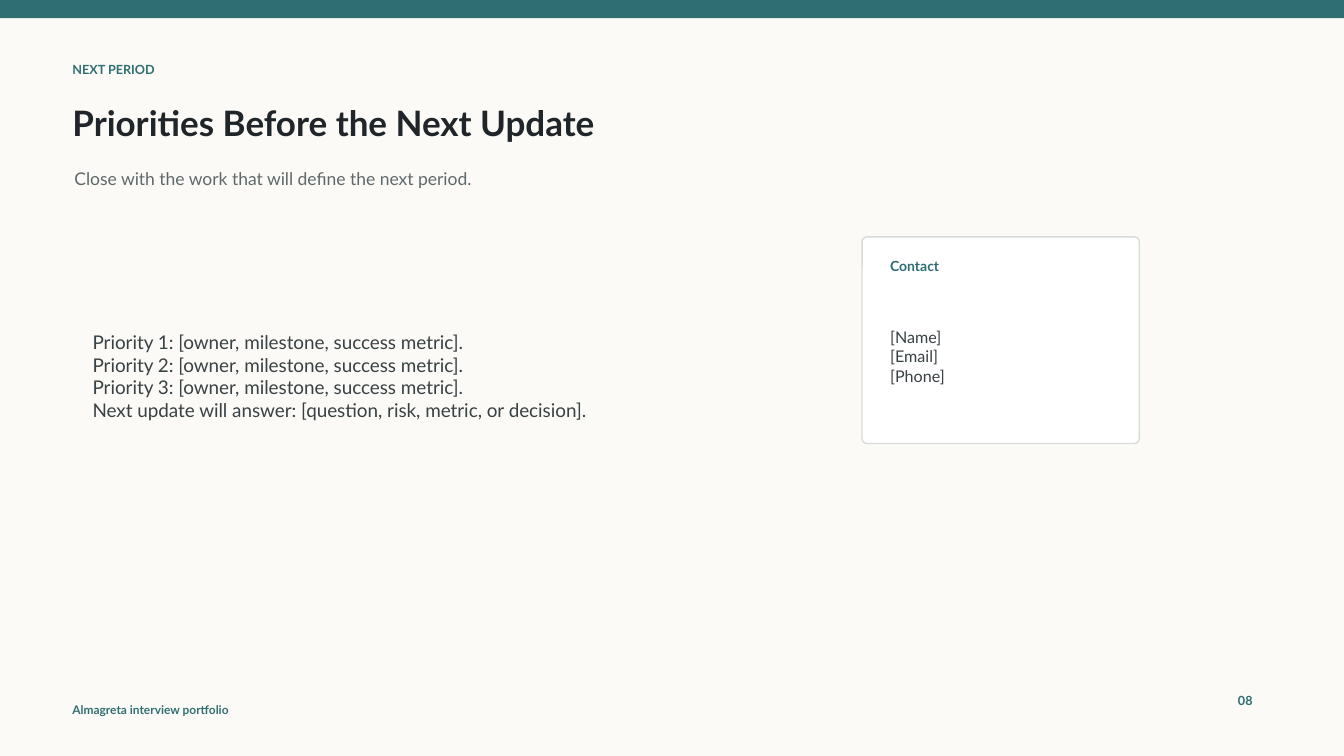
import pptx
import pptx.util
import pptx.dml.color
import pptx.enum.shapes
import pptx.enum.text

RGBColor = pptx.dml.color.RGBColor
Inches = pptx.util.Inches
Shape = pptx.enum.shapes.MSO_SHAPE

TEAL = RGBColor(0x2F, 0x6F, 0x73)
INK = RGBColor(0x1F, 0x25, 0x28)
BODY = RGBColor(0x38, 0x41, 0x44)
MUTED = RGBColor(0x5E, 0x68, 0x6B)
PAPER = RGBColor(0xFB, 0xFA, 0xF6)
WHITE = RGBColor(0xFF, 0xFF, 0xFF)
EDGE = RGBColor(0xD8, 0xDD, 0xD7)

LABEL = "NEXT PERIOD"
TITLE = "Priorities Before the Next Update"
LEAD = "Close with the work that will define the next period."
GOALS = [f"Priority {n}: [owner, milestone, success metric]." for n in (1, 2, 3)]
GOALS.append("Next update will answer: [question, risk, metric, or decision].")
HEAD = "Contact"
LINES = ["[Name]", "[Email]", "[Phone]"]
FOOTER = "Almagreta interview portfolio"
NUMBER = "08"

WIDE, HIGH = 13.33, 7.5
LEFT = 0.62
CARD = (8.55, 2.35, 2.75, 2.05)
PAD_X, PAD_Y = 0.18, 0.16
HEAD_H, GAP = 0.25, 0.07

deck = pptx.Presentation()
deck.slide_width, deck.slide_height = Inches(WIDE), Inches(HIGH)
slide = deck.slides.add_slide(deck.slide_layouts[6])
slide.background.fill.solid()
slide.background.fill.fore_color.rgb = PAPER


def add_text(text, place, size, color=TEAL, bold=False):
    box = slide.shapes.add_textbox(*map(Inches, place))
    frame = box.text_frame
    frame.word_wrap = True
    frame.vertical_anchor = pptx.enum.text.MSO_ANCHOR.MIDDLE
    frame.text = text if isinstance(text, str) else "\n".join(text)
    for para in frame.paragraphs:
        for run in para.runs:
            run.font.name = "Lato"
            run.font.size = pptx.util.Pt(size)
            run.font.bold = bold
            run.font.color.rgb = color


def add_panel(kind, place, fill, edge=None):
    panel = slide.shapes.add_shape(kind, *map(Inches, place))
    panel.shadow.inherit = False
    panel.fill.solid()
    panel.fill.fore_color.rgb = fill
    if edge is None:
        panel.line.fill.background()
    else:
        panel.line.color.rgb = edge
        panel.line.width = pptx.util.Pt(1)
    return panel


add_panel(Shape.RECTANGLE, (0, 0, WIDE, 0.18), TEAL)
add_text(FOOTER, (LEFT, 6.94, 3, 0.2), 8.5, bold=True)
add_text(NUMBER, (12.18, 6.82, 0.5, 0.25), 9, bold=True)
add_text(LABEL, (LEFT, 0.58, 4.8, 0.22), 9, bold=True)
add_text(TITLE, (LEFT, 0.94, 9.8, 0.55), 25, color=INK, bold=True)
add_text(LEAD, (LEFT + 0.02, 1.56, 10.8, 0.42), 12.5, color=MUTED)
add_text(GOALS, (LEFT + 0.2, 2.18, 7.05, 3.1), 13.5, color=BODY)

card = add_panel(Shape.ROUNDED_RECTANGLE, CARD, WHITE, edge=EDGE)
card.adjustments[0] = 0.024
x, y, w, h = CARD
x, y, w, h = x + PAD_X, y + PAD_Y, w - 2 * PAD_X, h - 2 * PAD_Y
drop = HEAD_H + GAP
add_text(HEAD, (x, y, w, HEAD_H), 10, bold=True)
add_text(LINES, (x, y + drop, w, h - drop - 0.0), 11.5, color=BODY)

deck.save("out.pptx")
